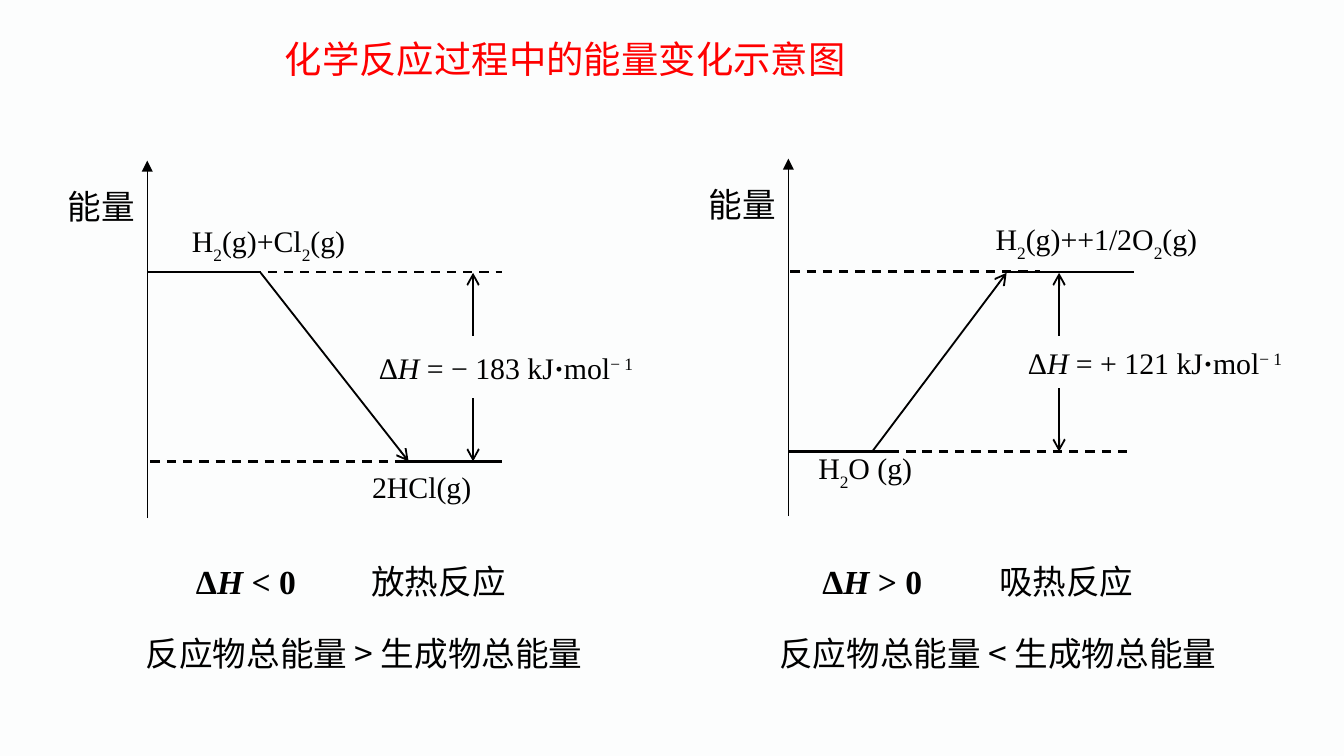
from dataclasses import dataclass
from typing import NamedTuple, Optional

from lxml import etree
from pptx import Presentation
from pptx import util as u
from pptx.dml.color import RGBColor
from pptx.enum import dml, shapes, text
from pptx.oxml.ns import qn

CELL = 0.1
COLUMNS, ROWS = 100, 56.25


@dataclass(frozen=True)
class Theme:
    background: RGBColor = RGBColor(0xFC, 0xFD, 0xFD)
    ink: RGBColor = RGBColor(0, 0, 0)
    accent: RGBColor = RGBColor(0xFF, 0, 0)
    chinese: str = "Noto Sans CJK SC"
    formula: str = "Times New Roman"
    axis_label: str = "Calibri"
    title_size: float = 20
    caption_size: float = 18
    formula_size: float = 16
    thin: float = 0.75
    medium: float = 1
    thick: float = 1.25


THEME = Theme()


class Point(NamedTuple):
    column: float
    row: float


class Box(NamedTuple):
    column: float
    row: float
    width: float
    height: float


class Piece(NamedTuple):
    words: str
    italic: bool = False
    bold: bool = False
    baseline: int = 0


class Style(NamedTuple):
    font: str
    size: float
    color: RGBColor = THEME.ink


class Span(NamedTuple):
    start: float
    end: float
    row: float


class Label(NamedTuple):
    box: Box
    pieces: list[Piece]


@dataclass(frozen=True)
class EnergyDiagram:
    axis_column: float
    axis_top: float
    levels: list[Span]
    guides: list[Span]
    gap_column: float
    gap_top: float
    gap_bottom: float
    reaction: tuple[Point, Point]
    species: list[Label]
    enthalpy: Label
    sign: Label
    kind: Label
    comparison: Label


TITLE = Style(THEME.chinese, THEME.title_size, THEME.accent)
CAPTION = Style(THEME.chinese, THEME.caption_size)
AXIS = Style(THEME.axis_label, THEME.caption_size)
SIGN = Style(THEME.formula, THEME.caption_size)
FORMULA = Style(THEME.formula, THEME.formula_size)
AXIS_HEIGHT = 26.6
GAP_ARROW = 4.7
CAPTION_ROW, COMPARISON_ROW = 41.25, 46.6
CAPTION_HEIGHT, FORMULA_HEIGHT = 4, 3.7
UPPER_ROW = 20.26


def cells(count: float) -> u.Length:
    return u.Inches(count * CELL)


def subscripted(*words: str) -> list[Piece]:
    return [Piece(word, baseline=-30 if word.isdigit() else 0) for word in words]


def enthalpy_value(value: str) -> list[Piece]:
    return [Piece("Δ"), Piece("H ", italic=True), Piece(f"= {value} kJ"),
            Piece("·", bold=True), Piece("mol"), Piece("− 1", baseline=30)]


def enthalpy_sign(relation: str) -> list[Piece]:
    return [Piece("Δ", bold=True), Piece("H ", italic=True, bold=True),
            Piece(f"{relation} 0", bold=True)]


def comparison(relation: str) -> list[Piece]:
    return [Piece(f"反应物总能量 {relation} 生成物总能量")]


def draw_text(canvas, label: Label, style: Style, wrap: bool = True,
              alignment=text.PP_ALIGN.LEFT) -> None:
    shape = canvas.add_textbox(*map(cells, label.box))
    frame = shape.text_frame
    frame.word_wrap = wrap
    frame.auto_size = text.MSO_AUTO_SIZE.SHAPE_TO_FIT_TEXT
    paragraph = frame.paragraphs[0]
    paragraph.alignment = alignment
    for piece in label.pieces:
        run = paragraph.add_run()
        run.text = piece.words
        font = run.font
        font.name, font.size = style.font, u.Pt(style.size)
        font.bold, font.italic = piece.bold, piece.italic
        font.color.rgb = style.color
        properties = run._r.get_or_add_rPr()
        if piece.baseline:
            properties.set("baseline", str(piece.baseline * 1000))
        east_asian = etree.Element(qn("a:ea"), typeface=THEME.chinese)
        properties.find(qn("a:latin")).addnext(east_asian)


def draw_line(canvas, start: Point, end: Point, width: float,
              dashed: bool = False, arrow: Optional[str] = None) -> None:
    connector = canvas.add_connector(
        shapes.MSO_CONNECTOR.STRAIGHT, *map(cells, (*start, *end)))
    connector.line.color.rgb = THEME.ink
    connector.line.width = u.Pt(width)
    if dashed:
        connector.line.dash_style = dml.MSO_LINE.DASH
    if arrow:
        etree.SubElement(connector.line._get_or_add_ln(), qn("a:tailEnd"), type=arrow)
    etree.SubElement(connector._element.spPr, qn("a:effectLst"))


def draw_diagram(slide, diagram: EnergyDiagram) -> None:
    canvas = slide.shapes.add_group_shape().shapes
    column, top = diagram.axis_column, diagram.axis_top
    draw_line(canvas, Point(column, top + AXIS_HEIGHT), Point(column, top),
              THEME.thin, arrow="triangle")
    energy = Label(Box(column - 6.9, top + 1.4, 8.9, CAPTION_HEIGHT), [Piece("能量")])
    draw_text(canvas, energy, AXIS, alignment=text.PP_ALIGN.JUSTIFY)
    for spans, dashed in ((diagram.levels, False), (diagram.guides, True)):
        for span in spans:
            draw_line(canvas, Point(span.start, span.row), Point(span.end, span.row),
                      THEME.thick, dashed)
    for tip, tail in ((diagram.gap_bottom, diagram.gap_bottom - GAP_ARROW),
                      (diagram.gap_top, diagram.gap_top + GAP_ARROW)):
        draw_line(canvas, Point(diagram.gap_column, tail),
                  Point(diagram.gap_column, tip), THEME.medium, arrow="arrow")
    draw_line(canvas, *diagram.reaction, THEME.medium, arrow="arrow")
    for label in diagram.species:
        draw_text(canvas, label, FORMULA)
    draw_text(canvas, diagram.enthalpy, FORMULA, wrap=False)
    draw_text(canvas, diagram.sign, SIGN)
    for label in (diagram.kind, diagram.comparison):
        draw_text(canvas, label, CAPTION)


EXOTHERMIC = EnergyDiagram(
    axis_column=10.96, axis_top=11.95,
    levels=[Span(10.96, 18.7, UPPER_ROW), Span(29.6, 37.35, 34.33)],
    guides=[Span(18.7, 37.35, UPPER_ROW), Span(11.2, 29.9, 34.33)],
    gap_column=35.2, gap_top=20.3, gap_bottom=34.33,
    reaction=(Point(19.4, 20.3), Point(30.4, 34.33)),
    species=[
        Label(Box(13.3, 16.1, 14.4, FORMULA_HEIGHT),
              subscripted("H", "2", "(g)+Cl", "2", "(g)")),
        Label(Box(26.7, 34.35, 11.9, FORMULA_HEIGHT), [Piece("2HCl(g)")])],
    enthalpy=Label(Box(27.2, 25.55, 21.6, FORMULA_HEIGHT), enthalpy_value("− 183")),
    sign=Label(Box(13.6, CAPTION_ROW, 10.5, CAPTION_HEIGHT), enthalpy_sign("<")),
    kind=Label(Box(26.65, CAPTION_ROW, 13.7, CAPTION_HEIGHT), [Piece("放热反应")]),
    comparison=Label(Box(9.85, COMPARISON_ROW, 35.9, CAPTION_HEIGHT), comparison(">")))

ENDOTHERMIC = EnergyDiagram(
    axis_column=58.66, axis_top=11.8,
    levels=[Span(74.9, 84.4, UPPER_ROW), Span(58.66, 66.4, 33.6)],
    guides=[Span(58.8, 77.4, 20.2), Span(65, 84.4, 33.6)],
    gap_column=78.8, gap_top=20.3, gap_bottom=33.6,
    reaction=(Point(64.9, 33.6), Point(74.9, 20.3)),
    species=[
        Label(Box(73.1, 15.9, 19.1, FORMULA_HEIGHT),
              subscripted("H", "2", "(g)++1/2O", "2", "(g)")),
        Label(Box(59.9, 33, 10.9, FORMULA_HEIGHT), subscripted("H", "2", "O (g)"))],
    enthalpy=Label(Box(75.5, 25.15, 21.6, FORMULA_HEIGHT), enthalpy_value("+ 121")),
    sign=Label(Box(60.2, CAPTION_ROW, 10.5, CAPTION_HEIGHT), enthalpy_sign(">")),
    kind=Label(Box(73.35, CAPTION_ROW, 16.1, CAPTION_HEIGHT), [Piece("吸热反应")]),
    comparison=Label(Box(57, COMPARISON_ROW, 35.9, CAPTION_HEIGHT), comparison("<")))


def main() -> None:
    presentation = Presentation()
    presentation.slide_width, presentation.slide_height = cells(COLUMNS), cells(ROWS)
    slide = presentation.slides.add_slide(presentation.slide_layouts[6])
    slide.background.fill.solid()
    slide.background.fill.fore_color.rgb = THEME.background
    title = Label(Box(20.2, 2.2, 55.2, 4.4), [Piece("化学反应过程中的能量变化示意图")])
    draw_text(slide.shapes, title, TITLE)
    for diagram in (EXOTHERMIC, ENDOTHERMIC):
        draw_diagram(slide, diagram)
    presentation.save("out.pptx")


if __name__ == "__main__":
    main()
